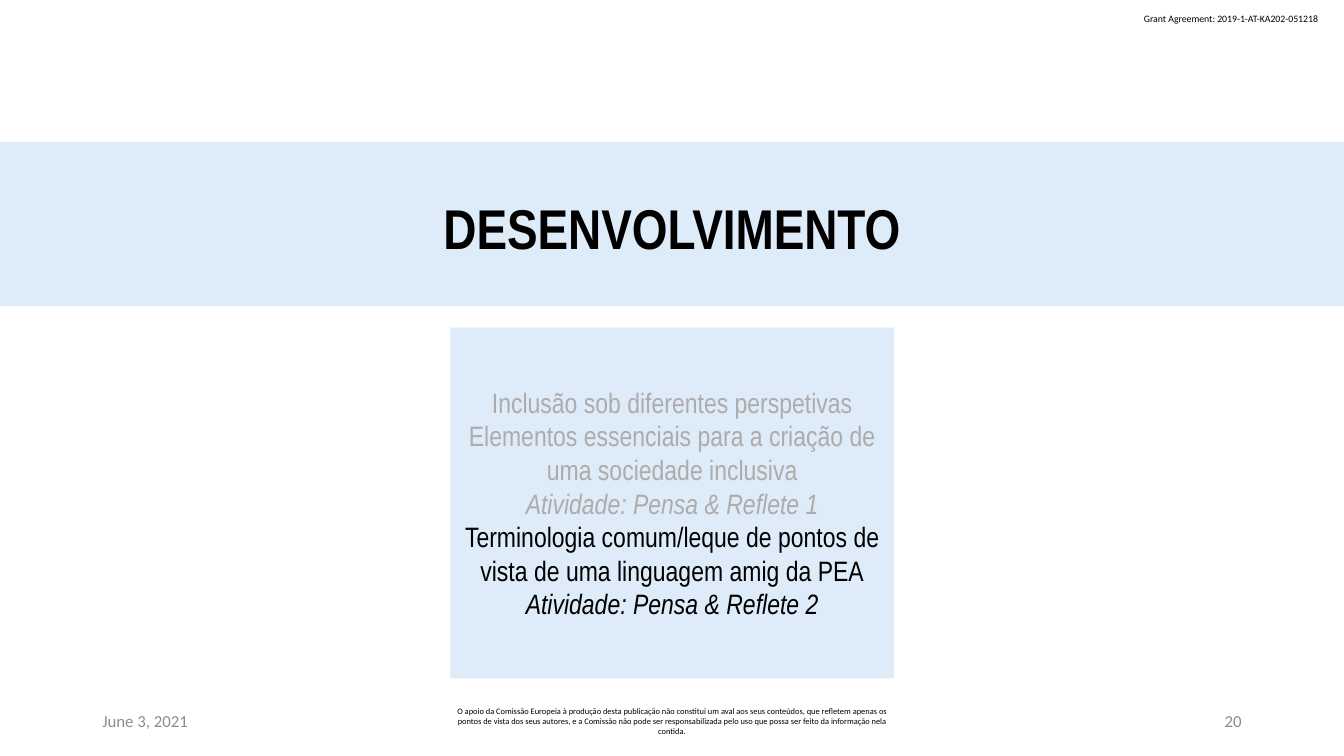
import pptx
import pptx.util
import pptx.dml.color
import pptx.enum.shapes
import pptx.enum.text

Pt = pptx.util.Pt
RGBColor = pptx.dml.color.RGBColor
ALIGN = pptx.enum.text.PP_ALIGN
ANCHOR = pptx.enum.text.MSO_ANCHOR

BLACK = RGBColor(0x00, 0x00, 0x00)
GREY = RGBColor(0x8C, 0x8C, 0x8C)
DONE = RGBColor(0xAF, 0xAB, 0xAB)
PALE_BLUE = RGBColor(0xDE, 0xEB, 0xF8)


def add_line(p, text, font, size, color, align, bold=False, italic=False):
    p.text = text
    p.alignment = align
    f = p.runs[0].font
    f.name, f.size, f.bold, f.italic = font, Pt(size), bold, italic
    f.color.rgb = color


def add_panel(left, top, width, height):
    sp = s.shapes.add_shape(pptx.enum.shapes.MSO_SHAPE.RECTANGLE,
                            Pt(left), Pt(top), Pt(width), Pt(height))
    sp.shadow.inherit = False
    sp.fill.solid()
    sp.fill.fore_color.rgb = PALE_BLUE
    sp.line.fill.background()
    tf = sp.text_frame
    tf.word_wrap = True
    tf.vertical_anchor = ANCHOR.MIDDLE
    tf.margin_left = tf.margin_right = Pt(9.4)
    tf.margin_top = tf.margin_bottom = Pt(5)
    return tf


prs = pptx.Presentation()
prs.slide_width, prs.slide_height = Pt(960), Pt(540)
s = prs.slides.add_slide(prs.slide_layouts[6])

disclaimer = (
    "O apoio da Comissão Europeia à produção desta publicação não constitui um aval "
    "aos seus conteúdos, que refletem apenas os pontos de vista dos seus autores, e a "
    "Comissão não pode ser responsabilizada pelo uso que possa ser feito da informação "
    "nela contida."
)
small_texts = [
    ("Grant Agreement: 2019-1-AT-KA202-051218", 810, 5.8, 142, 15.8, 7, BLACK,
     ALIGN.LEFT, ANCHOR.TOP, False),
    ("June 3, 2021", 66, 500.5, 216, 28.8, 12, GREY, ALIGN.LEFT, ANCHOR.MIDDLE, True),
    (disclaimer, 318, 500.5, 324, 28.8, 6, BLACK, ALIGN.CENTER, ANCHOR.MIDDLE, True),
    ("20", 678, 500.5, 216, 28.8, 12, GREY, ALIGN.RIGHT, ANCHOR.MIDDLE, True),
]
for text, left, top, width, height, size, color, align, anchor, wrap in small_texts:
    tf = s.shapes.add_textbox(Pt(left), Pt(top), Pt(width), Pt(height)).text_frame
    tf.word_wrap = wrap
    tf.vertical_anchor = anchor
    add_line(tf.paragraphs[0], text, "Calibri", size, color, align)

tf = add_panel(0, 101.5, 960, 117)
tf.margin_top = Pt(9)
add_line(tf.paragraphs[0], "DESENVOLVIMENTO", "Arial Narrow", 40, BLACK,
         ALIGN.CENTER, bold=True)

topics = [
    ("Inclusão sob diferentes perspetivas", DONE, False),
    ("Elementos essenciais para a criação de uma sociedade inclusiva", DONE, False),
    ("Atividade: Pensa & Reflete 1", DONE, True),
    ("Terminologia comum/leque de pontos de vista de uma linguagem amig da PEA",
     BLACK, False),
    ("Atividade: Pensa & Reflete 2", BLACK, True),
]
tf = add_panel(321.8, 234, 316.8, 250.5)
for i, (text, color, italic) in enumerate(topics):
    p = tf.paragraphs[0] if i == 0 else tf.add_paragraph()
    add_line(p, text, "Arial Narrow", 20, color, ALIGN.CENTER, italic=italic)

prs.save("out.pptx")
